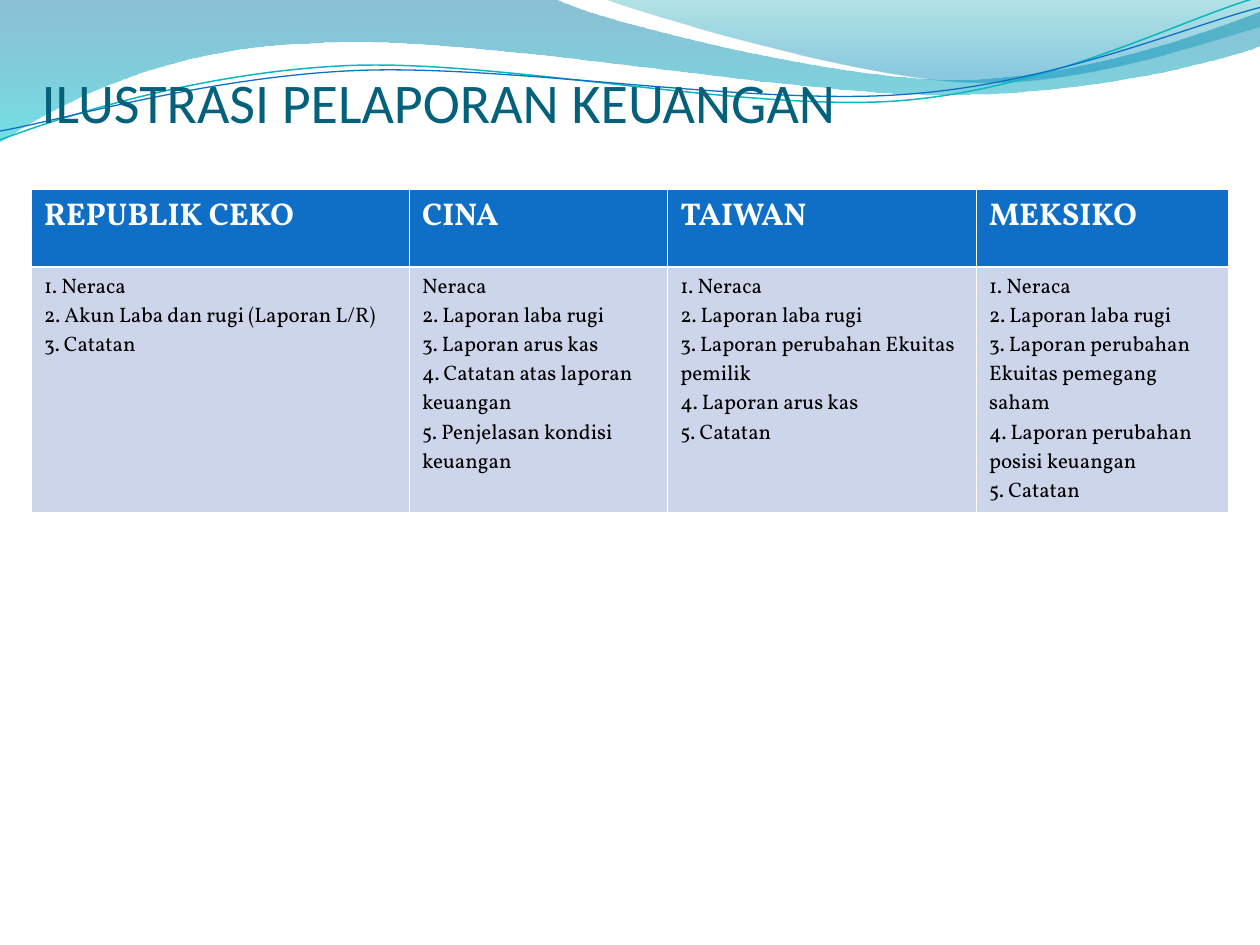
from math import cos, radians, sin

from lxml.etree import SubElement
from pptx import Presentation
from pptx.dml.color import RGBColor
from pptx.enum.text import MSO_ANCHOR, MSO_AUTO_SIZE, PP_ALIGN
from pptx.oxml.ns import qn
from pptx.util import Inches, Pt

BLUE, PALE, WHITE = "0F6FC6", "CCD5EA", "FFFFFF"
TILT = 2.7

BANDS = [
    ([[(0, 0)], [(4.4, -0.01)],
      [(4.76, 0.17), (6.64, 0.63), (7.58, 0.63)],
      [(8.53, 0.63), (9.58, 0.26), (10, 0.09)],
      [(10.01, 0.36)],
      [(9.83, 0.44), (8.7, 0.76), (7.46, 0.75)],
      [(6.22, 0.75), (3.82, 0.28), (2.57, 0.34)],
      [(1.29, 0.36), (0.46, 0.83), (-0.01, 1.13)],
      [(0, 0)]],
     [(0, "0074A1", 45), (1, "00C6CF", 55)]),
    ([[(4.79, -0.01)],
      [(5.09, 0.11), (6.82, 0.62), (7.69, 0.65)],
      [(8.56, 0.69), (9.61, 0.32), (10, 0.21)],
      [(10, 0)], [(4.79, -0.01)]],
     [(0, "00A1A9", 30), (0.8, "008BBF", 45)]),
]
LINES = [
    ([[(0, 1.11)],
      [(0.48, 0.93), (1.58, 0.57), (2.77, 0.52)],
      [(3.95, 0.47), (5.93, 0.89), (7.13, 0.8)],
      [(8.33, 0.71), (9.38, 0.15), (9.98, -0.02)]], (4.99, 0.58), "0AB8BF", 0.85),
    ([[(0, 1.04)],
      [(0.47, 0.96), (1.64, 0.61), (2.83, 0.56)],
      [(4.03, 0.51), (5.97, 0.84), (7.17, 0.75)],
      [(8.36, 0.67), (9.41, 0.21), (10, 0.06)]], (5, 0.59), BLUE, 0.75),
]
REPORTS = [
    ("REPUBLIK CEKO", 3, ["1. Neraca", "2. Akun Laba dan rugi (Laporan L/R)", "3. Catatan"]),
    ("CINA", 2.05, ["Neraca", "2. Laporan laba rugi", "3. Laporan arus kas",
                    "4. Catatan atas laporan keuangan", "5. Penjelasan kondisi keuangan", ""]),
    ("TAIWAN", 2.45, ["1. Neraca", "2. Laporan laba rugi", "3. Laporan perubahan Ekuitas pemilik",
                      "4. Laporan arus kas", "5. Catatan"]),
    ("MEKSIKO", 2, ["1. Neraca", "2. Laporan laba rugi", "3. Laporan perubahan Ekuitas pemegang saham",
                    "4. Laporan perubahan posisi keuangan", "5. Catatan"]),
]


def paint(color, code):
    """Set a colour from a hex string."""
    color.rgb = RGBColor.from_string(code)


def style(para, face, size, code, bold=False):
    """Set the font of a paragraph."""
    font = para.font
    font.name, font.size, font.bold = face, Pt(size), bold
    paint(font.color, code)


def turn(route, center, angle):
    """Turn a route clockwise about a center."""
    cx, cy = center
    c, s = cos(radians(angle)), sin(radians(angle))
    return [[(cx + (x - cx) * c - (y - cy) * s, cy + (x - cx) * s + (y - cy) * c)
             for x, y in part] for part in route]


def draw(shapes, left, top, route, close):
    """Draw a freeform of straight and cubic parts."""
    spots = [(Inches(left + x), Inches(top + y)) for part in route for x, y in part]
    build = shapes.build_freeform(*spots[0])
    build.add_line_segments(spots[1:], close=close)
    shape = build.convert_to_shape()
    shape.shadow.inherit = False
    steps = iter(list(shape._element.iter(qn("a:lnTo"))))
    for part in route[1:]:
        first, *rest = [next(steps) for _ in part]
        if rest:
            curve = first.makeelement(qn("a:cubicBezTo"))
            first.addprevious(curve)
            for step in (first, *rest):
                curve.append(step[0])
                step.getparent().remove(step)
    return shape


def add_waves(slide, left, top):
    """Draw the shaded bands and thin lines of the header."""
    for route, stops in BANDS:
        band = draw(slide.shapes, left, top, route, True)
        band.line.fill.background()
        band.fill.gradient()
        band.fill.gradient_angle = 270
        for stop, (place, code, alpha) in zip(band.fill.gradient_stops, stops):
            stop.position = place
            paint(stop.color, code)
            tint = stop._gs.find(qn("a:srgbClr"))
            SubElement(tint, qn("a:alpha"), val=str(alpha * 1000))
    group = slide.shapes.add_group_shape()
    for route, center, code, width in LINES:
        curve = draw(group.shapes, left, top, turn(route, center, TILT), False)
        curve.rotation = 360 - TILT
        curve.fill.background()
        paint(curve.line.color, code)
        curve.line.width = Pt(width)


def add_title(slide, left, top, width, height):
    """Place the title in front of the waves."""
    title = slide.shapes.title
    title.left, title.top = Inches(left), Inches(top)
    title.width, title.height = Inches(width), Inches(height)
    frame = title.text_frame
    frame.auto_size = MSO_AUTO_SIZE.NONE
    frame.vertical_anchor = MSO_ANCHOR.BOTTOM
    frame.margin_left = frame.margin_right = frame.margin_bottom = 0
    frame.margin_top = Inches(0.05)
    para = frame.paragraphs[0]
    para.text = "ILUSTRASI PELAPORAN KEUANGAN"
    para.alignment = PP_ALIGN.LEFT
    style(para, "Calibri", 32, "04617B")
    slide.shapes._spTree.append(title._element)


def add_reports(slide, left, top, width, height):
    """Build the table of reports by country."""
    frame = slide.shapes.add_table(2, len(REPORTS), Inches(left), Inches(top),
                                   Inches(width), Inches(height))
    table = frame.table
    for row in table.rows:
        row.height = Inches(0.62)
    for col, (land, span, items) in enumerate(REPORTS):
        table.columns[col].width = Inches(span)
        looks = [(land, 18, WHITE, True, BLUE),
                 ("\v".join(items), 12, "000000", False, PALE)]
        for row, (text, size, ink, bold, back) in enumerate(looks):
            cell = table.cell(row, col)
            cell.fill.solid()
            paint(cell.fill.fore_color, back)
            para = cell.text_frame.paragraphs[0]
            para.text = text
            style(para, "Vollkorn", size, ink, bold)
    frame.height = Inches(height)


def main():
    """Build and save the slide."""
    deck = Presentation()
    deck.slide_width, deck.slide_height = Inches(10), Inches(7.5)
    slide = deck.slides.add_slide(deck.slide_layouts[5])
    add_waves(slide, 0, 0)
    add_title(slide, 0.33, 0.42, 9, 0.65)
    add_reports(slide, 0.25, 1.5, 9.5, 2.32)
    deck.save("out.pptx")


if __name__ == "__main__":
    main()
